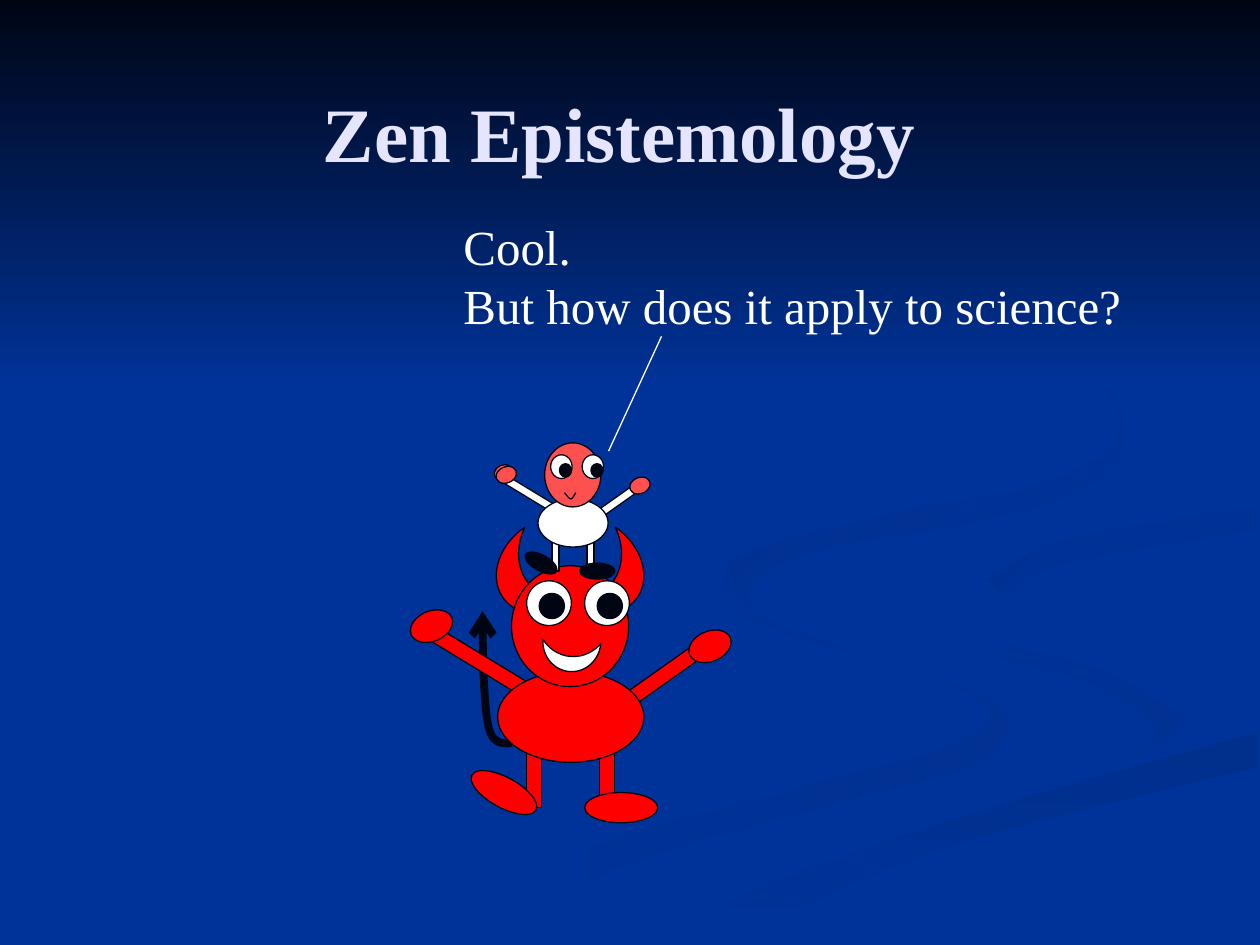
import itertools
from typing import NamedTuple, Optional

import pptx
import pptx.dml.color
import pptx.enum.shapes
import pptx.enum.text
import pptx.oxml
import pptx.oxml.ns
import pptx.util

# Slide grid: 1000 columns by 750 rows
COLUMNS, ROWS = 1000, 750
WIDTH, HEIGHT = pptx.util.Inches(10), pptx.util.Inches(7.5)

SKY, INK, RED, SKIN, WHITE, LILAC = (
    "003399", "000514", "FF0000", "FF5050", "FFFFFF", "E5E5FF")
ELLIPSE = pptx.enum.shapes.MSO_SHAPE.OVAL
RECT = pptx.enum.shapes.MSO_SHAPE.RECTANGLE
MOON = pptx.enum.shapes.MSO_SHAPE.MOON


class Figure(NamedTuple):
    """A little person: corner of the body, scale, colours and eyes."""
    left: float
    top: float
    scale_x: float
    scale_y: float
    clothes: str
    skin: str
    shoes: str
    eye_lefts: tuple
    eye_top: float
    pupil_shift: float


class Ribbon(NamedTuple):
    """A closed background outline made of smooth edges."""
    start: str
    end: str
    angle: float
    edges: list


# Edges that neighbouring ribbons share
BEND = [(725, 464), (759, 498), (871, 530), (943, 570)]
BANK = [(519, 747), (630, 693), (797, 638), (998, 581)]
INLET = [(781, 460), (850, 427), (998, 402)]

RIBBONS = [
    Ribbon(SKY, "003193", 0, [
        [(575, 459), (572, 476), (611, 499), (697, 525), (770, 551), (785, 570),
         (749, 594), (652, 620), (499, 661), (376, 707), (300, 749)],
        [(361, 749), (499, 687), (676, 634), (769, 609), (800, 581), (781, 553),
         (682, 519), (594, 485), (575, 459)]]),
    Ribbon(SKY, "003193", 45, [
        BEND, [(943, 570), (932, 589), (894, 605)],
        [(894, 605), (918, 579), (868, 544), (766, 512), (725, 464)]]),
    Ribbon("002F8C", SKY, 90, [
        BANK, [(998, 609), (752, 672), (571, 749)], [(571, 749), (503, 749)]]),
    Ribbon(SKY, SKY, 0, [
        BEND, [(943, 570), (892, 605), (743, 643), (573, 703), (477, 749)],
        BANK, [(998, 538), (866, 509), (781, 460)],
        INLET, [(998, 387), (808, 417), (742, 439), (725, 464)]]),
    Ribbon("003091", SKY, 45, [
        INLET, [(998, 420), (843, 448), (805, 472), (826, 496)],
        [(826, 496), (781, 460)]]),
    Ribbon("002F8E", SKY, 45, [
        [(762, 233), (846, 279), (889, 335), (842, 378), (704, 409), (597, 437),
         (577, 462), (622, 500)],
        [(622, 500), (593, 470), (649, 436), (786, 412), (876, 378), (890, 324),
         (843, 275), (762, 233)]]),
    Ribbon(INK, SKY, 90, [[(0, 0), (0, 308)], [(1000, 308), (1000, 0)]]),
]

DEVIL = Figure(395, 533, 1, 1, RED, RED, RED, (418, 464), 461, 10)
RIDER = Figure(427, 396, 0.48, 0.53, WHITE, SKIN, INK, (437, 462), 361, 7)
DEVIL_TAIL = [(418, 581), (403, 590), (389, 581), (384, 540), (383, 485)]
RIDER_SMILE = [(448, 391), (453, 396), (457, 391)]


def rgb(value: str) -> pptx.dml.color.RGBColor:
    return pptx.dml.color.RGBColor.from_string(value)


def cell(x: float, y: float) -> tuple:
    return round(x * WIDTH / COLUMNS), round(y * HEIGHT / ROWS)


def set_line(shape, color: str, points: float) -> None:
    shape.line.color.rgb = rgb(color)
    shape.line.width = pptx.util.Pt(points)


def smooth(knots: list, steps: int = 8) -> list:
    """Catmull-Rom spline through the knots; two knots stay straight."""
    if len(knots) == 2:
        return knots
    padded = [knots[0], *knots, knots[-1]]
    track = [knots[0]]
    for i, step in itertools.product(range(len(knots) - 1), range(1, steps + 1)):
        t = step / steps
        track.append(tuple(
            b + t / 2 * (c - a + t * (2 * a - 5 * b + 4 * c - d
                                      + t * (3 * (b - c) + d - a)))
            for a, b, c, d in zip(*padded[i:i + 4])))
    return track


def draw_outline(slide, points: list, closed: bool):
    first, *rest = itertools.starmap(cell, points)
    builder = slide.shapes.build_freeform(*first)
    builder.add_line_segments(rest, close=closed)
    shape = builder.convert_to_shape()
    shape.shadow.inherit = False
    return shape


def draw_ribbon(slide, ribbon: Ribbon) -> None:
    points = list(itertools.chain.from_iterable(map(smooth, ribbon.edges)))
    shape = draw_outline(slide, points, True)
    shape.line.fill.background()
    shape.fill.gradient()
    shape.fill.gradient_angle = -ribbon.angle % 360
    for stop, color in zip(shape.fill.gradient_stops, (ribbon.start, ribbon.end)):
        stop.color.rgb = rgb(color)


def draw_curve(slide, knots: list, points: float):
    curve = draw_outline(slide, smooth(knots), False)
    curve.fill.background()
    set_line(curve, INK, points)
    return curve


def draw_part(slide, preset: int, fill: str, left: float, top: float,
              width: float, height: float, turn: float = 0):
    shape = slide.shapes.add_shape(preset, *cell(left, top), *cell(width, height))
    shape.shadow.inherit = False
    shape.rotation = turn
    shape.fill.solid()
    shape.fill.fore_color.rgb = rgb(fill)
    set_line(shape, INK, 0.75)
    return shape


def draw_figure(slide, who: Figure, horned: bool = False) -> None:
    def put(preset, fill, x, y, width, height, turn=0):
        """Place a part relative to the corner of the body."""
        return draw_part(slide, preset, fill,
                         who.left + x * who.scale_x, who.top + y * who.scale_y,
                         width * who.scale_x, height * who.scale_y, turn)

    # Arms, legs and body
    put(RECT, who.clothes, -58, -12, 93, 12, 31.3)
    put(RECT, who.clothes, 81, 0, 93, 12, -35.3)
    put(RECT, who.clothes, 81, 48, 12, 60)
    put(RECT, who.clothes, 23, 60, 12, 48)
    put(ELLIPSE, who.clothes, 0, 0, 116, 72)
    # Head, with horns behind it and a grin
    if horned:
        put(MOON, who.skin, 0, -108, 46, 72, -34.5)
        right_horn = put(MOON, who.skin, 69, -108, 46, 72, 34.5)
        right_horn._element.spPr.xfrm.set("flipH", "1")
    put(ELLIPSE, who.skin, 11, -84, 93, 96)
    if horned:
        put(MOON, WHITE, 46, -35, 24, 46, -85.8)
    # Feet and hands
    put(ELLIPSE, who.shoes, -24, 84, 58, 24, 28.7)
    put(ELLIPSE, who.shoes, 69, 96, 58, 24)
    put(ELLIPSE, who.skin, 151, -32, 35, 24, -22.9)
    put(ELLIPSE, who.skin, -70, -48, 35, 24, -22.9)
    # Eyes
    for left in who.eye_lefts:
        for fill, shift, size in ((WHITE, 0, 35.5), (INK, who.pupil_shift, 20)):
            draw_part(slide, ELLIPSE, fill, left + shift, who.eye_top + shift,
                      size * who.scale_x, size * who.scale_y)


def write(frame, lines: list, size: float, color: str, bold: bool = False,
          align: Optional[int] = None) -> None:
    frame.text = "\n".join(lines)
    style = {"name": "Times New Roman", "size": pptx.util.Pt(size), "bold": bold}
    for paragraph in frame.paragraphs:
        paragraph.alignment = align
        for run in paragraph.runs:
            run.font.color.rgb = rgb(color)
            for key, value in style.items():
                setattr(run.font, key, value)


def main() -> None:
    deck = pptx.Presentation()
    deck.slide_width, deck.slide_height = WIDTH, HEIGHT
    slide = deck.slides.add_slide(deck.slide_layouts[5])
    namespace = pptx.oxml.ns.nsdecls("a")

    # Background
    slide.background.fill.solid()
    slide.background.fill.fore_color.rgb = rgb(SKY)
    for ribbon in RIBBONS:
        draw_ribbon(slide, ribbon)

    # Title, in front of the background
    title = slide.shapes.title
    slide.shapes._spTree.append(title._element)
    title.left, title.top = cell(50, 42)
    title.width, title.height = cell(883, 125)
    title.text_frame.vertical_anchor = pptx.enum.text.MSO_ANCHOR.MIDDLE
    write(title.text_frame, ["Zen Epistemology"], 44, LILAC, True,
          pptx.enum.text.PP_ALIGN.CENTER)

    # Devil
    tail = draw_curve(slide, DEVIL_TAIL, 4.5)
    tail.line._get_or_add_ln().append(
        pptx.oxml.parse_xml(f'<a:tailEnd {namespace} type="arrow"/>'))
    draw_figure(slide, DEVIL, horned=True)

    # Question and its pointer
    question = slide.shapes.add_textbox(*cell(358, 167), *cell(600, 104))
    question.text_frame.word_wrap = True
    write(question.text_frame, ["Cool.", "But how does it apply to science?"], 28, WHITE)
    pointer = slide.shapes.add_connector(
        pptx.enum.shapes.MSO_CONNECTOR.STRAIGHT, *cell(483, 358), *cell(525, 267))
    set_line(pointer, WHITE, 0.75)
    pointer._element.spPr.append(pptx.oxml.parse_xml(f"<a:effectLst {namespace}/>"))

    # Rider on the devil's head
    draw_part(slide, ELLIPSE, SKIN, 392, 369, 15, 12, -22.9)
    draw_figure(slide, RIDER)
    draw_curve(slide, RIDER_SMILE, 0.75)

    deck.save("out.pptx")


if __name__ == "__main__":
    main()
